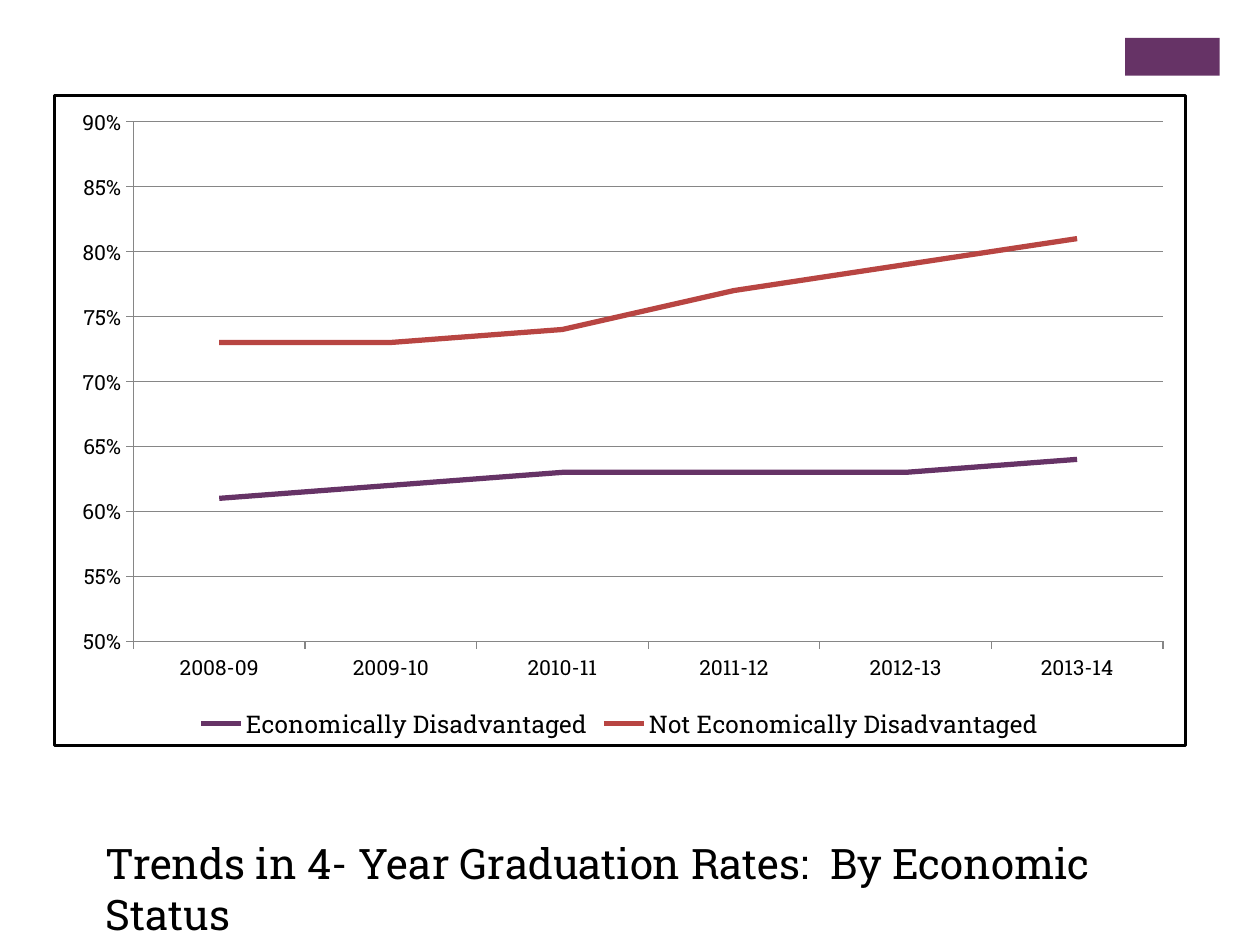
from dataclasses import dataclass

from lxml.etree import fromstring
from pptx import Presentation
from pptx.chart.data import CategoryChartData
from pptx.dml.color import RGBColor
from pptx.enum.chart import XL_CHART_TYPE as ChartType
from pptx.enum.chart import XL_LEGEND_POSITION as LegendPosition
from pptx.enum.chart import XL_MARKER_STYLE as MarkerStyle
from pptx.enum.chart import XL_TICK_MARK as TickMark
from pptx.enum.shapes import MSO_SHAPE as Shape
from pptx.enum.text import MSO_ANCHOR as Anchor
from pptx.enum.text import MSO_AUTO_SIZE as AutoSize
from pptx.enum.text import PP_ALIGN as Align
from pptx.oxml.ns import qn
from pptx.util import Inches, Pt

FONT = "Roboto Slab"
BLACK, PURPLE, RED, GRAY = "000000", "663366", "B84542", "868686"
WIDTH, HEIGHT = Inches(10), Inches(7.5)
CHART_NS = "http://schemas.openxmlformats.org/drawingml/2006/chart"
DRAWING_NS = "http://schemas.openxmlformats.org/drawingml/2006/main"


@dataclass
class Box:
    """A rectangle given as shares of the slide's size."""
    left: float
    top: float
    width: float
    height: float

    def lengths(self) -> tuple:
        return (int(self.left * WIDTH), int(self.top * HEIGHT),
                int(self.width * WIDTH), int(self.height * HEIGHT))


@dataclass
class RateSeries:
    name: str
    rates: list
    color: str


YEARS = ["2008-09", "2009-10", "2010-11", "2011-12", "2012-13", "2013-14"]
GROUPS = [
    RateSeries("Economically Disadvantaged",
               [0.61, 0.62, 0.63, 0.63, 0.63, 0.64], PURPLE),
    RateSeries("Not Economically Disadvantaged",
               [0.73, 0.73, 0.74, 0.77, 0.79, 0.81], RED),
]
ACCENT_BOX = Box(0.893, 0.04, 0.075, 0.04)
CHART_BOX = Box(0.042, 0.1, 0.9, 0.69)
TITLE_BOX = Box(0.074, 0.88, 0.886, 0.07)
PLOT_SHARES = {"x": 0.07, "y": 0.04, "w": 0.91, "h": 0.8}


def color(hex_value: str) -> RGBColor:
    return RGBColor.from_string(hex_value)


def set_font(font, size: float) -> None:
    font.name = FONT
    font.size = Pt(size)
    font.color.rgb = color(BLACK)


def set_line(line, hex_value: str, width: float) -> None:
    line.color.rgb = color(hex_value)
    line.width = Pt(width)


def add_accent(slide) -> None:
    accent = slide.shapes.add_shape(Shape.RECTANGLE, *ACCENT_BOX.lengths())
    accent.shadow.inherit = False
    accent.fill.solid()
    accent.fill.fore_color.rgb = color(PURPLE)
    accent.line.fill.background()


def frame_chart(chart) -> None:
    """Give the chart its border and place its plot area."""
    border = fromstring(
        f'<c:spPr xmlns:c="{CHART_NS}" xmlns:a="{DRAWING_NS}"><a:noFill/>'
        f'<a:ln w="{Pt(1.5)}"><a:solidFill><a:srgbClr val="{BLACK}"/>'
        '</a:solidFill></a:ln></c:spPr>')
    chart.element.find(qn("c:chart")).addnext(border)

    modes = '<c:xMode val="edge"/><c:yMode val="edge"/>'
    shares = "".join(f'<c:{key} val="{share}"/>' for key, share in PLOT_SHARES.items())
    layout = fromstring(
        f'<c:layout xmlns:c="{CHART_NS}"><c:manualLayout>'
        f'<c:layoutTarget val="inner"/>{modes}{shares}</c:manualLayout></c:layout>')
    plot_area = chart.element.find(".//" + qn("c:plotArea"))
    for old_layout in plot_area.findall(qn("c:layout")):
        plot_area.remove(old_layout)
    plot_area.insert(0, layout)


def add_rate_chart(slide) -> None:
    data = CategoryChartData(number_format="0%")
    data.categories = YEARS
    for group in GROUPS:
        data.add_series(group.name, group.rates)
    chart = slide.shapes.add_chart(ChartType.LINE, *CHART_BOX.lengths(), data).chart
    set_font(chart.font, 10)
    chart.has_title = False
    chart.plots[0].vary_by_categories = False

    # Lines
    for series, group in zip(chart.plots[0].series, GROUPS):
        series.smooth = False
        series.marker.style = MarkerStyle.NONE
        set_line(series.format.line, group.color, 3)

    # Axes
    for axis in (chart.category_axis, chart.value_axis):
        axis.major_tick_mark = TickMark.OUTSIDE
        axis.minor_tick_mark = TickMark.NONE
        set_font(axis.tick_labels.font, 12)
        set_line(axis.format.line, GRAY, 0.75)
    rates = chart.value_axis
    rates.minimum_scale, rates.maximum_scale, rates.major_unit = 0.5, 0.9, 0.05
    rates.tick_labels.number_format = "0%"
    rates.tick_labels.number_format_is_linked = False
    rates.has_major_gridlines = True
    set_line(rates.major_gridlines.format.line, GRAY, 0.75)

    # Legend
    chart.has_legend = True
    chart.legend.position = LegendPosition.BOTTOM
    chart.legend.include_in_layout = False
    set_font(chart.legend.font, 14)
    frame_chart(chart)


def set_title(slide, text: str) -> None:
    title = slide.shapes.title
    title.left, title.top, title.width, title.height = TITLE_BOX.lengths()
    frame = title.text_frame
    frame.word_wrap = True
    frame.auto_size = AutoSize.SHAPE_TO_FIT_TEXT
    frame.vertical_anchor = Anchor.TOP
    paragraph = frame.paragraphs[0]
    paragraph.alignment = Align.LEFT
    run = paragraph.add_run()
    run.text = text
    set_font(run.font, 24)


def main() -> None:
    presentation = Presentation()
    presentation.slide_width, presentation.slide_height = WIDTH, HEIGHT
    slide = presentation.slides.add_slide(presentation.slide_layouts[5])
    add_accent(slide)
    add_rate_chart(slide)
    set_title(slide, "Trends in 4- Year Graduation Rates:  By Economic Status")
    presentation.save("out.pptx")


if __name__ == "__main__":
    main()
